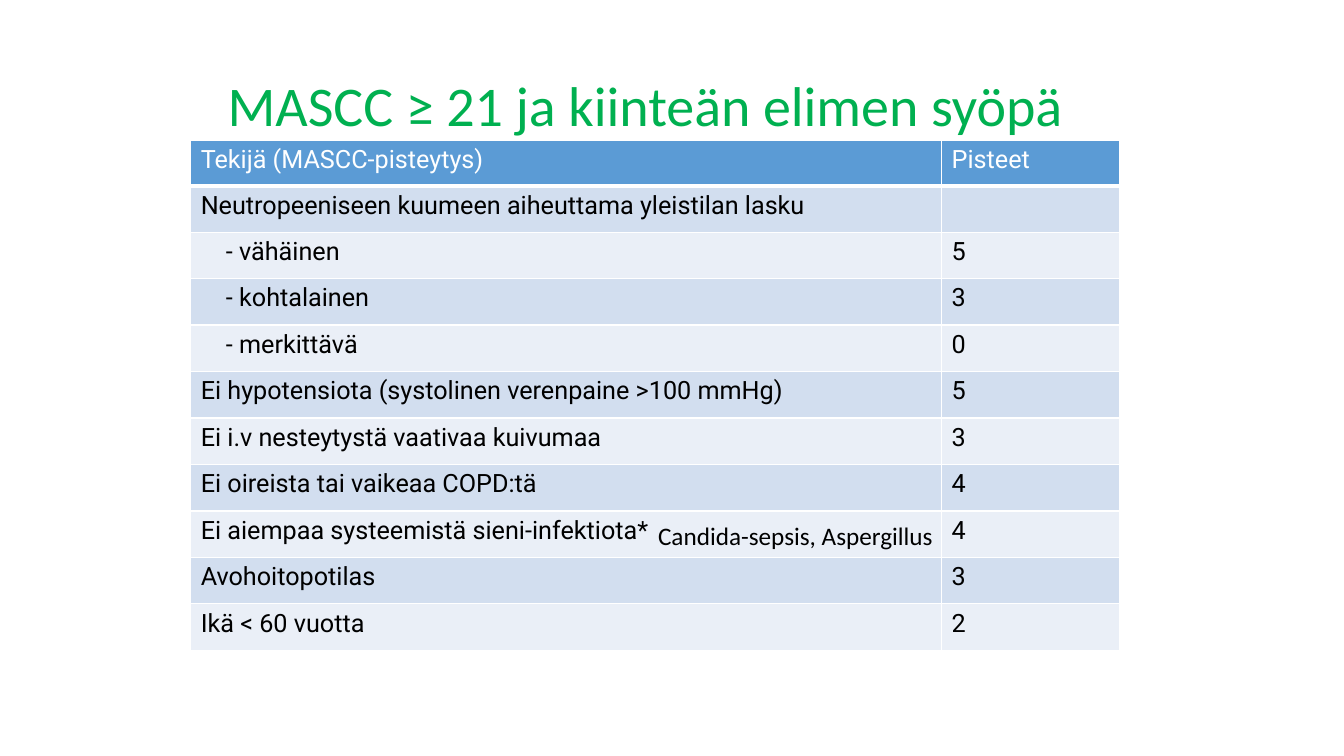
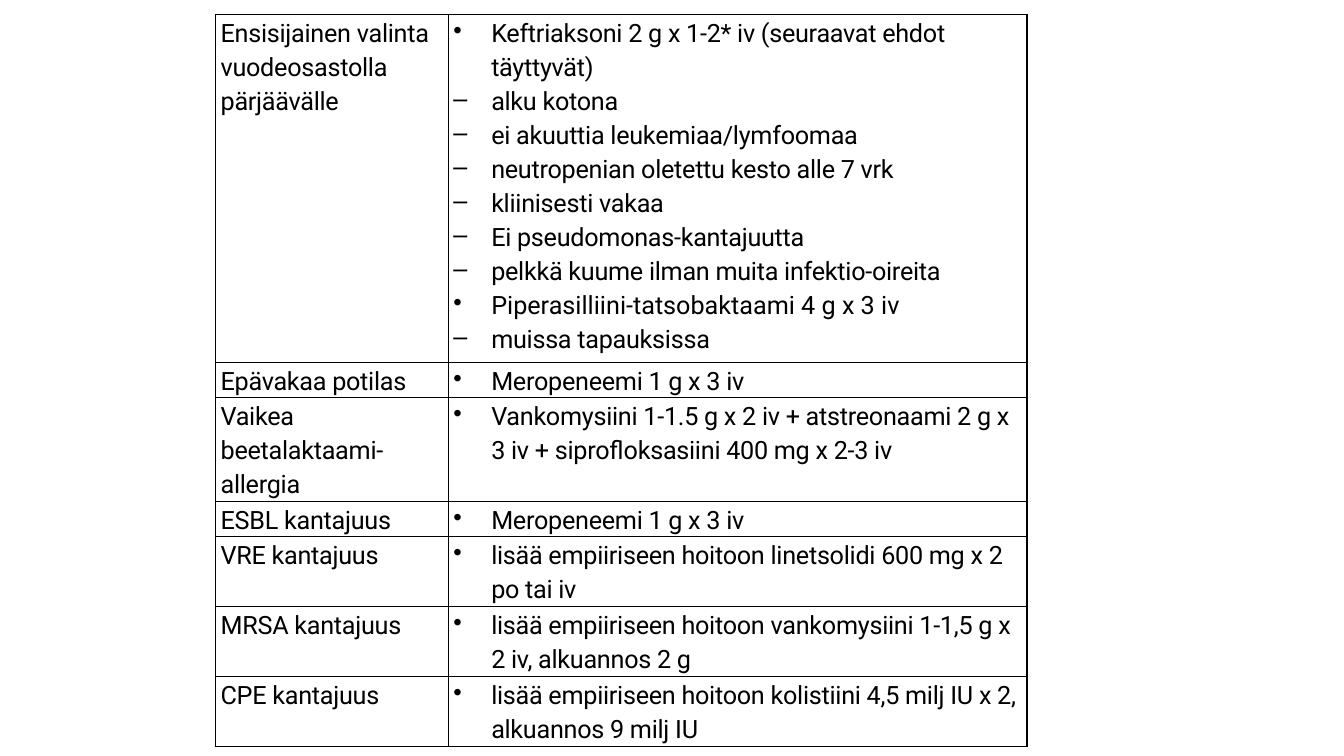
"""Two slides on neutropenic fever: the MASCC score and the choice of antibiotic."""
from dataclasses import dataclass

from lxml.etree import SubElement
from pptx import Presentation
from pptx.dml.color import RGBColor as RGB
from pptx.enum.text import MSO_ANCHOR as Anchor
from pptx.oxml.ns import qn
from pptx.util import Pt


@dataclass(frozen=True)
class Theme:
    """Colours, fonts and type sizes of the deck."""
    white: str = "FFFFFF"
    black: str = "000000"
    title: str = "00B050"
    header: str = "5B9BD5"
    bands: tuple = ("D2DEEF", "EAEFF7")
    text_font: str = "Calibri"
    table_font: str = "Roboto"
    title_size: float = 40
    body_size: float = 18


THEME = Theme()

SCORES = [
    ("Tekijä (MASCC-pisteytys)", "Pisteet"),
    ("Neutropeeniseen kuumeen aiheuttama yleistilan lasku", ""),
    ("- vähäinen", "5"),
    ("- kohtalainen", "3"),
    ("- merkittävä", "0"),
    ("Ei hypotensiota (systolinen verenpaine >100 mmHg)", "5"),
    ("Ei i.v nesteytystä vaativaa kuivumaa", "3"),
    ("Ei oireista tai vaikeaa COPD:tä", "4"),
    ("Ei aiempaa systeemistä sieni-infektiota*", "4"),
    ("Avohoitopotilas", "3"),
    ("Ikä < 60 vuotta", "2"),
]

TREATMENTS = [
    (248, "Ensisijainen valinta vuodeosastolla pärjäävälle", [
        ("•", "Keftriaksoni 2 g x 1-2* iv (seuraavat ehdot täyttyvät)"),
        ("–", "alku kotona"),
        ("–", "ei akuuttia leukemiaa/lymfoomaa"),
        ("–", "neutropenian oletettu kesto alle 7 vrk"),
        ("–", "kliinisesti vakaa"),
        ("–", "Ei pseudomonas-kantajuutta"),
        ("–", "pelkkä kuume ilman muita infektio-oireita"),
        ("•", "Piperasilliini-tatsobaktaami 4 g x 3 iv"),
        ("–", "muissa tapauksissa")]),
    (25, "Epävakaa potilas", [("•", "Meropeneemi 1 g x 3 iv")]),
    (74, "Vaikea beetalaktaami-allergia", [
        ("•", "Vankomysiini 1-1.5 g x 2 iv + atstreonaami 2 g x 3 iv"
              " + siprofloksasiini 400 mg x 2-3 iv")]),
    (25, "ESBL kantajuus", [("•", "Meropeneemi 1 g x 3 iv")]),
    (50, "VRE kantajuus", [
        ("•", "lisää empiiriseen hoitoon linetsolidi 600 mg x 2 po tai iv")]),
    (50, "MRSA kantajuus", [
        ("•", "lisää empiiriseen hoitoon vankomysiini 1-1,5 g x 2 iv, alkuannos 2 g")]),
    (50, "CPE kantajuus", [
        ("•", "lisää empiiriseen hoitoon kolistiini 4,5 milj IU x 2, alkuannos 9 milj IU")]),
]


def style_run(p, font, size, color, spacing=0):
    """Format every run of a paragraph."""
    for r in p.runs:
        r.font.name, r.font.size = font, Pt(size)
        r.font.color.rgb = RGB.from_string(color)
        if spacing:
            r.font._element.set("spc", str(round(spacing * 100)))


def indent(p, left, first=0, bullet=None):
    """Indent a paragraph and give it an optional bullet."""
    pPr = p._p.get_or_add_pPr()
    pPr.set("marL", str(Pt(left)))
    pPr.set("indent", str(Pt(first)))
    if bullet:
        SubElement(pPr, qn("a:buChar"), char=bullet)


def set_borders(cell, color, bottom=1):
    """Draw solid lines on the four sides of a cell."""
    tcPr = cell._tc.get_or_add_tcPr()
    for side, width in (("L", 1), ("R", 1), ("T", 1), ("B", bottom)):
        ln = SubElement(tcPr, qn(f"a:ln{side}"), w=str(Pt(width)))
        SubElement(SubElement(ln, qn("a:solidFill")), qn("a:srgbClr"), val=color)


def add_text(s, box, text, size, color):
    """Place one unwrapped line of text in a box."""
    sp = s.shapes.add_textbox(*map(Pt, box))
    tf = sp.text_frame
    tf.word_wrap = False
    tf.text = text
    style_run(tf.paragraphs[0], THEME.text_font, size, color)


def add_grid(s, left, top, widths, heights):
    """Add a plain table with the given column widths and row heights."""
    frame = s.shapes.add_table(len(heights), len(widths), Pt(left), Pt(top),
                               Pt(sum(widths)), Pt(sum(heights)))
    table = frame.table
    table.first_row = table.horz_banding = False
    for col, width in zip(table.columns, widths):
        col.width = Pt(width)
    for row, height in zip(table.rows, heights):
        row.height = Pt(height)
    return table


def score_table(s, left, top):
    """Draw the banded MASCC score table."""
    heights = [32.4] + [33.2] * (len(SCORES) - 1)
    table = add_grid(s, left, top, (536.4, 127.4), heights)
    for i, row in enumerate(SCORES):
        fill = THEME.bands[(i - 1) % 2] if i else THEME.header
        color = THEME.black if i else THEME.white
        for j, text in enumerate(row):
            cell = table.cell(i, j)
            set_borders(cell, THEME.white, 1 if i else 3)
            cell.fill.solid()
            cell.fill.fore_color.rgb = RGB.from_string(fill)
            cell.text_frame.text = text
            p = cell.text_frame.paragraphs[0]
            style_run(p, THEME.table_font, THEME.body_size, color)
            if text.startswith("- "):
                indent(p, 18)


def treatment_table(s, left, top):
    """Draw the ruled table of treatments."""
    heights = [height for height, _, _ in TREATMENTS]
    table = add_grid(s, left, top, (166.3, 413.3), heights)
    for i, (_, patient, drugs) in enumerate(TREATMENTS):
        for j, items in enumerate(([(None, patient)], drugs)):
            cell = table.cell(i, j)
            set_borders(cell, THEME.black)
            cell.fill.background()
            cell.vertical_anchor = Anchor.TOP
            cell.margin_left = cell.margin_right = Pt(3.6)
            cell.margin_top = cell.margin_bottom = 0
            tf = cell.text_frame
            tf.text = "\n".join(text for _, text in items)
            for p, (bullet, text) in zip(tf.paragraphs, items):
                p.line_spacing = 1.15
                spacing = 0 if text.startswith("Piperasilliini") else -0.2
                style_run(p, THEME.table_font, THEME.body_size, THEME.black, spacing)
                if bullet:
                    indent(p, 27, -27, bullet)


def score_slide(s):
    """Build the slide with the MASCC score."""
    left, top = 136.2, 100.2
    score_table(s, left, top)
    add_text(s, (left + 326.8, top + 267.8, 213, 29), "Candida-sepsis, Aspergillus",
             THEME.body_size, THEME.black)
    add_text(s, (left + 19.3, top - 53.4, 617, 55.4), "MASCC ≥ 21 ja kiinteän elimen syöpä",
             THEME.title_size, THEME.title)


def treatment_slide(s):
    """Build the slide with the treatments."""
    treatment_table(s, 154, 10.5)


def main():
    """Build and save the deck."""
    prs = Presentation()
    prs.slide_width, prs.slide_height = Pt(960), Pt(540)
    for build in (score_slide, treatment_slide):
        build(prs.slides.add_slide(prs.slide_layouts[6]))
    prs.save("out.pptx")


if __name__ == "__main__":
    main()
